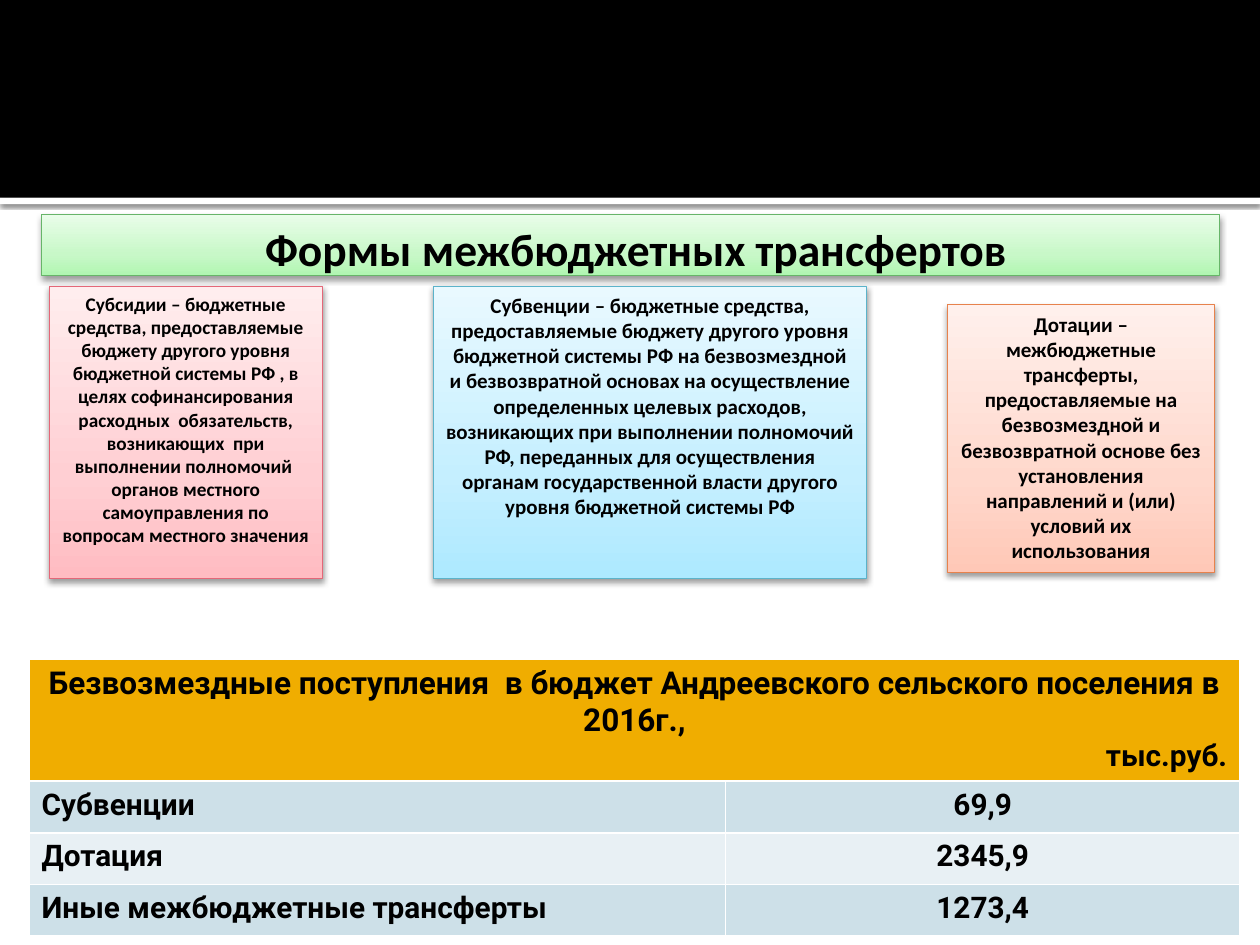
from lxml import etree
from pptx import Presentation
from pptx.dml.color import RGBColor
from pptx.enum.shapes import MSO_SHAPE
from pptx.enum.text import MSO_ANCHOR, PP_ALIGN
from pptx.oxml import parse_xml
from pptx.oxml.ns import nsdecls, qn
from pptx.util import Inches, Pt

RECT = MSO_SHAPE.RECTANGLE
TOP = MSO_ANCHOR.TOP
LEFT, CENTER, RIGHT = PP_ALIGN.LEFT, PP_ALIGN.CENTER, PP_ALIGN.RIGHT

BLACK, WHITE = "000000", "FFFFFF"
STOPS = (0, 35, 100)  # percent, from the bottom edge upwards
SOFT_SHADOW = {"alpha": 38, "blur": 3.5, "distance": 2}
RULE_SHADOW = {"alpha": 60, "blur": 2.5, "distance": 0.8}

TITLE = {
    "text": "Формы межбюджетных трансфертов", "size": 26,
    "box": (0.33, 1.7, 9.35, 0.49),
    "gradient": ("B0F6B1", "C8F8C8", "E9FDE9"), "line": "67B569",
}
TITLE_MARGINS = {"margin_left": 0.06, "margin_top": 0.1,
                 "margin_right": 0.1, "margin_bottom": 0.05}

TRANSFERS = [
    {"text": "Субсидии – бюджетные средства, предоставляемые бюджету другого "
             "уровня бюджетной системы РФ , в целях софинансирования "
             "расходных  обязательств, возникающих  при выполнении "
             "полномочий  органов местного самоуправления по вопросам "
             "местного значения",
     "size": 11, "box": (0.39, 2.27, 2.17, 2.32),
     "gradient": ("FFBCC2", "FFCFD3", "FFEDEE"), "line": "E46778"},
    {"text": "Субвенции – бюджетные средства, предоставляемые бюджету другого "
             "уровня бюджетной системы РФ на безвозмездной и безвозвратной "
             "основах на осуществление определенных целевых расходов, "
             "возникающих при выполнении полномочий РФ, переданных для "
             "осуществления органам государственной власти другого уровня "
             "бюджетной системы РФ",
     "size": 12, "box": (3.44, 2.27, 3.44, 2.32),
     "gradient": ("ADE9FF", "C5EFFF", "E9F9FF"), "line": "5BB3CA"},
    {"text": "Дотации – межбюджетные трансферты, предоставляемые на "
             "безвозмездной и безвозвратной основе без установления "
             "направлений и (или) условий их использования",
     "size": 12, "box": (7.52, 2.42, 2.12, 2.12),
     "gradient": ("FFC8B7", "FFD8CC", "FFF0EC"), "line": "E7824C"},
]

RECEIPTS_TITLE = ("Безвозмездные поступления  в бюджет Андреевского "
                  "сельского поселения в 2016г.,")
RECEIPTS_UNIT = "тыс.руб."
RECEIPTS = [
    ("Субвенции", "69,9"),
    ("Дотация", "2345,9"),
    ("Иные межбюджетные трансферты", "1273,4"),
]
RECEIPT_COLUMNS = (5.53, 4.08)
HEADER_HEIGHT, ROW_HEIGHT = 0.97, 0.41
HEADER_FILL, BAND_FILLS = "F0AD00", ("CDE0E8", "E8F0F4")


def rgb(value):
    return RGBColor.from_string(value)


def write(paragraph, text, size, font_name, align):
    paragraph.alignment = align
    run = paragraph.add_run()
    run.text = text
    look = {"name": font_name, "size": Pt(size), "bold": True}
    for attribute, value in look.items():
        setattr(run.font, attribute, value)
    run.font.color.rgb = rgb(BLACK)


def add_rect(slide, box):
    rect = slide.shapes.add_shape(RECT, *map(Inches, box))
    rect.shadow.inherit = False
    rect.line.fill.background()
    return rect


def fill_solid(target, color):
    target.fill.solid()
    target.fill.fore_color.rgb = rgb(color)


def fill_gradient(shape, colors):
    stops = "".join(
        f'<a:gs pos="{pos * 1000}"><a:srgbClr val="{color}"/></a:gs>'
        for pos, color in zip(STOPS, colors))
    shape.fill.background()
    no_fill = shape.element.spPr.find(qn("a:noFill"))
    no_fill.getparent().replace(no_fill, parse_xml(
        f'<a:gradFill {nsdecls("a")} rotWithShape="1"><a:gsLst>{stops}'
        '</a:gsLst><a:lin ang="16200000" scaled="0"/></a:gradFill>'))


def drop_shadow(shape, alpha, blur, distance):
    effects = shape.element.spPr.find(qn("a:effectLst"))
    shadow = etree.SubElement(
        effects, qn("a:outerShdw"), blurRad=str(Pt(blur)),
        dist=str(Pt(distance)), dir="5400000", rotWithShape="0")
    color = etree.SubElement(shadow, qn("a:srgbClr"), val=BLACK)
    etree.SubElement(color, qn("a:alpha"), val=str(alpha * 1000))


def add_panel(slide, content):
    """Add a gradient box with bold centred text."""
    panel = add_rect(slide, content["box"])
    fill_gradient(panel, content["gradient"])
    panel.line.color.rgb = rgb(content["line"])
    panel.line.width = Pt(0.5)
    drop_shadow(panel, **SOFT_SHADOW)
    frame = panel.text_frame
    frame.word_wrap = True
    frame.vertical_anchor = TOP
    write(frame.paragraphs[0], content["text"], content["size"],
          "Calibri", CENTER)
    return frame


def add_receipts(slide):
    table = slide.shapes.add_table(
        len(RECEIPTS) + 1, len(RECEIPT_COLUMNS), Inches(0.23), Inches(5.23),
        Inches(sum(RECEIPT_COLUMNS)),
        Inches(HEADER_HEIGHT + ROW_HEIGHT * len(RECEIPTS))).table
    for column, width in zip(table.columns, RECEIPT_COLUMNS):
        column.width = Inches(width)
    for index, row in enumerate(table.rows):
        row.height = Inches(ROW_HEIGHT if index else HEADER_HEIGHT)

    header = table.cell(0, 0)
    header.merge(table.cell(0, len(RECEIPT_COLUMNS) - 1))
    fill_solid(header, HEADER_FILL)
    frame = header.text_frame
    write(frame.paragraphs[0], RECEIPTS_TITLE, 18, "Roboto", CENTER)
    write(frame.add_paragraph(), RECEIPTS_UNIT, 17, "Roboto", RIGHT)

    for index, receipt in enumerate(RECEIPTS):
        for column, (text, align) in enumerate(zip(receipt, (LEFT, CENTER))):
            cell = table.cell(index + 1, column)
            fill_solid(cell, BAND_FILLS[index % len(BAND_FILLS)])
            write(cell.text_frame.paragraphs[0], text, 17, "Roboto", align)


def main():
    prs = Presentation()
    prs.slide_width, prs.slide_height = Inches(10), Inches(7.5)
    slide = prs.slides.add_slide(prs.slide_layouts[6])

    rule = add_rect(slide, (0, 1.57, 10, 0.05))
    fill_solid(rule, WHITE)
    drop_shadow(rule, **RULE_SHADOW)
    fill_solid(add_rect(slide, (0, 0, 10, 1.57)), BLACK)

    title_frame = add_panel(slide, TITLE)
    for side, margin in TITLE_MARGINS.items():
        setattr(title_frame, side, Inches(margin))
    title = title_frame.paragraphs[0]
    title.line_spacing = 0.9
    indents = title._p.get_or_add_pPr()
    indents.set("marL", str(Inches(0.48)))
    indents.set("indent", str(Inches(-0.35)))

    for transfer in TRANSFERS:
        add_panel(slide, transfer)
    add_receipts(slide)
    prs.save("out.pptx")


if __name__ == "__main__":
    main()
